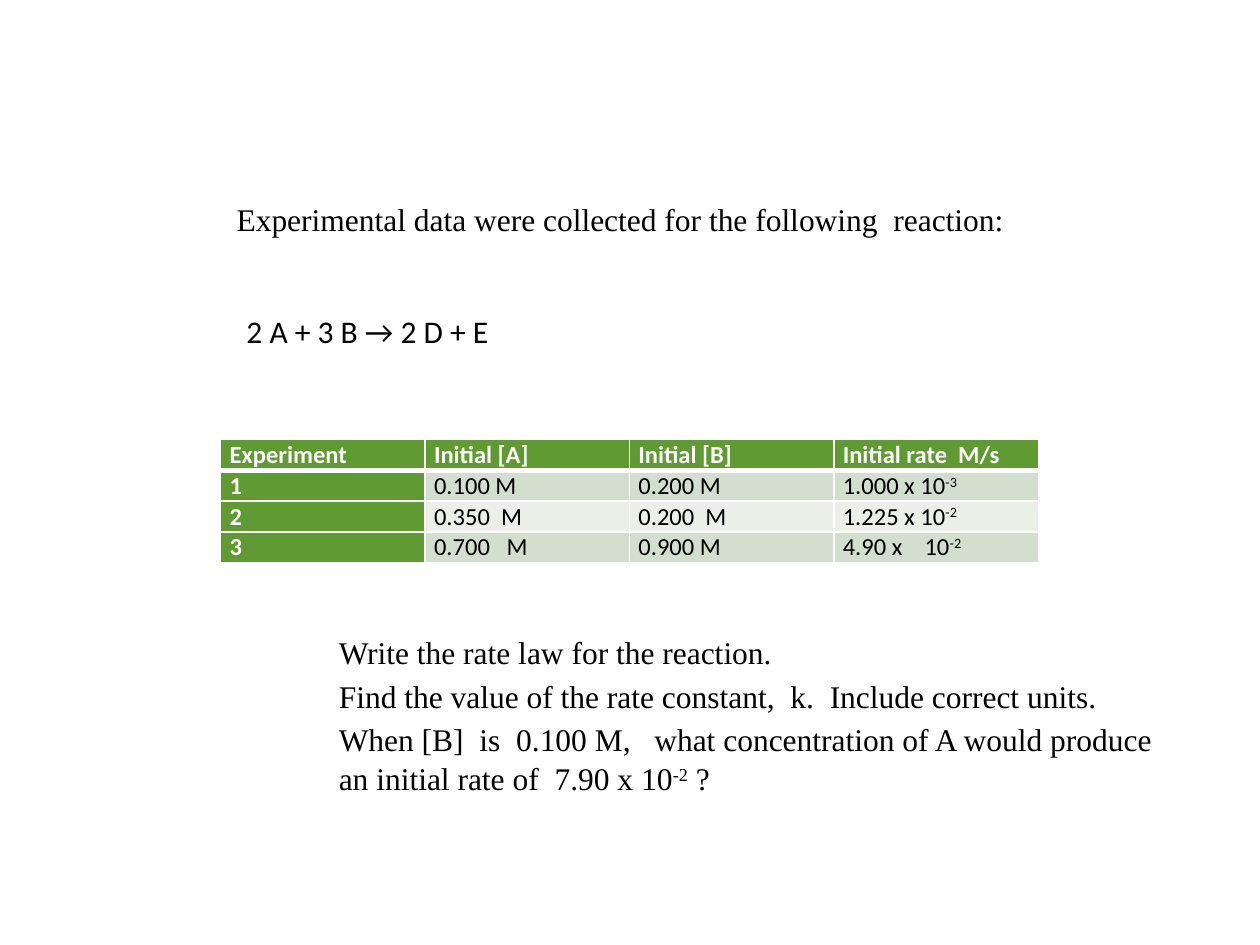
import pptx
import pptx.dml.color
import pptx.enum.text
import pptx.oxml
import pptx.oxml.ns
import pptx.util
from pptx.util import Cm

WHITE, BLACK, GREEN = "FFFFFF", "000000", "609A33"
BANDS = ("D2DECE", "EAEFE8")
BODY_FONT, DATA_FONT = "Times New Roman", "Calibri"


def color(hex_code):
    return pptx.dml.color.RGBColor.from_string(hex_code)


class RateLawSlide:
    def __init__(self, presentation):
        self.slide = presentation.slides.add_slide(presentation.slide_layouts[6])
        self.line_spacing = 1.03
        self.space_before = pptx.util.Pt(2.7)
        self.indent = Cm(2.69)

    def fill_paragraph(self, paragraph, text, font, size, hex_code, bold=False):
        """Style and fill a paragraph; parts between ^ marks are superscript."""
        paragraph.font.name = font
        paragraph.font.size = pptx.util.Pt(size)
        paragraph.font.bold = bold
        paragraph.font.color.rgb = color(hex_code)
        for index, part in enumerate(text.split("^")):
            if part:
                run = paragraph.add_run()
                run.text = part
                if index % 2:
                    run._r.get_or_add_rPr().set("baseline", "30000")

    def text(self, left, top, width, height, lines, font, indented=True):
        frame = self.slide.shapes.add_textbox(left, top, width, height).text_frame
        frame.word_wrap = True
        frame.auto_size = pptx.enum.text.MSO_AUTO_SIZE.SHAPE_TO_FIT_TEXT
        for index, line in enumerate(lines):
            paragraph = frame.add_paragraph() if index else frame.paragraphs[0]
            if indented:
                paragraph.line_spacing = self.line_spacing
                properties = paragraph._p.get_or_add_pPr()
                properties.set("marL", str(self.indent))
                properties.set("indent", "0")
            if index:
                paragraph.space_before = self.space_before
            self.fill_paragraph(paragraph, line, font, 18, BLACK)

    def borders(self, cell, widths):
        """Draw white borders, widths in points by side."""
        properties = cell._tc.get_or_add_tcPr()
        for position, side in enumerate("LRTB"):
            width = pptx.util.Pt(widths.get(side, 1))
            properties.insert(position, pptx.oxml.parse_xml(
                f'<a:ln{side} {pptx.oxml.ns.nsdecls("a")} w="{width}"><a:solidFill>'
                f'<a:srgbClr val="{WHITE}"/></a:solidFill></a:ln{side}>'))

    def table(self, left, top, width, row_height, rows):
        grid = self.slide.shapes.add_table(
            len(rows), len(rows[0]), left, top, width, row_height * len(rows)).table
        heavy_sides = {0: {"B": 3}, 1: {"T": 3}}
        for r, row in enumerate(rows):
            for c, value in enumerate(row):
                cell = grid.cell(r, c)
                heading = r == 0 or c == 0
                cell.margin_left = cell.margin_right = Cm(0.18)
                cell.margin_top = cell.margin_bottom = 0
                cell.fill.solid()
                cell.fill.fore_color.rgb = color(GREEN if heading else BANDS[(r - 1) % 2])
                self.borders(cell, heavy_sides.get(r, {}))
                paragraph = cell.text_frame.paragraphs[0]
                paragraph.line_spacing = self.line_spacing
                self.fill_paragraph(paragraph, value, DATA_FONT, 14,
                                    WHITE if heading else BLACK, heading)


def main():
    presentation = pptx.Presentation()
    presentation.slide_width, presentation.slide_height = Cm(25.4), Cm(19.05)
    page = RateLawSlide(presentation)

    page.table(Cm(4.45), Cm(8.86), Cm(16.48), Cm(0.58), [
        ("Experiment", "Initial [A]", "Initial [B]", "Initial rate  M/s"),
        ("1", "0.100 M", "0.200 M", "1.000 x 10^-3^"),
        ("2", "0.350  M", "0.200  M", "1.225 x 10^-2^"),
        ("3", "0.700   M", "0.900 M", "4.90 x    10^-2^"),
    ])
    page.text(Cm(4.72), Cm(6.17), Cm(12.7), Cm(1.02),
              ["2 A + 3 B → 2 D + E"], DATA_FONT, indented=False)
    page.text(Cm(1.83), Cm(3.89), Cm(19.63), Cm(0.99),
              ["Experimental data were collected for the following  reaction:"], BODY_FONT)
    page.text(Cm(3.89), Cm(12.62), Cm(19.63), Cm(4.42), [
        "Write the rate law for the reaction.",
        "Find the value of the rate constant,  k.  Include correct units.",
        "When [B]  is  0.100 M,   what concentration of A would produce "
        "an initial rate of  7.90 x 10^-2^ ?",
    ], BODY_FONT)
    presentation.save("out.pptx")


if __name__ == "__main__":
    main()
